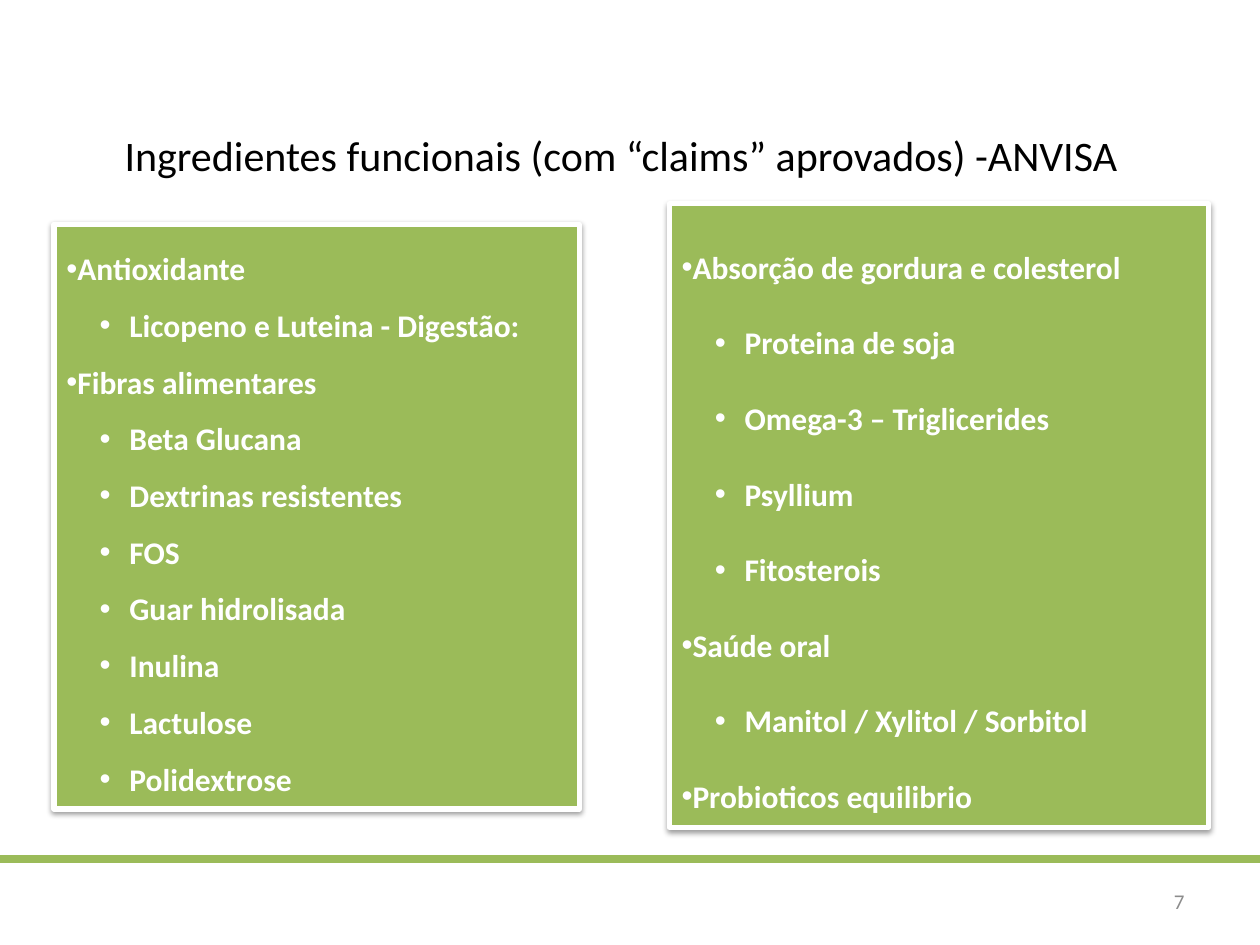
import dataclasses

import lxml.etree
import pptx
import pptx.dml.color
import pptx.enum.shapes
import pptx.enum.text
import pptx.oxml
import pptx.oxml.ns
import pptx.util

Cm, Pt = pptx.util.Cm, pptx.util.Pt
ALIGN = pptx.enum.text.PP_ALIGN
ANCHOR = pptx.enum.text.MSO_ANCHOR
GREEN, WHITE, BLACK, GREY = "9BBB59", "FFFFFF", "000000", "8C8C8C"
SHADOW = (
    '<a:effectLst xmlns:a="http://schemas.openxmlformats.org/drawingml/2006/main">'
    '<a:outerShdw blurRad="40000" dist="20000" dir="5400000" rotWithShape="0">'
    '<a:srgbClr val="000000"><a:alpha val="38000"/></a:srgbClr>'
    "</a:outerShdw></a:effectLst>"
)


@dataclasses.dataclass
class Group:
    head: str
    items: tuple[str, ...] = ()


@dataclasses.dataclass
class Panel:
    left: float
    top: float
    width: float
    height: float
    gap: float
    groups: tuple[Group, ...]


PANELS = (
    Panel(1.09, 4.52, 10.59, 11.79, 1.5, (
        Group("Antioxidante", ("Licopeno e Luteina - Digestão:",)),
        Group("Fibras alimentares", (
            "Beta Glucana", "Dextrinas resistentes", "FOS", "Guar hidrolisada",
            "Inulina", "Lactulose", "Polidextrose")),
    )),
    Panel(13.49, 4.11, 10.87, 12.57, 2.0, (
        Group("Absorção de gordura e colesterol", (
            "Proteina de soja", "Omega-3 – Triglicerides", "Psyllium", "Fitosterois")),
        Group("Saúde oral", ("Manitol / Xylitol / Sorbitol",)),
        Group("Probioticos equilibrio"),
    )),
)


def rgb(code: str) -> pptx.dml.color.RGBColor:
    return pptx.dml.color.RGBColor.from_string(code)


def add_bullet(para, left: float, hang: float) -> None:
    props = para._p.get_or_add_pPr()
    props.set("marL", str(Cm(left)))
    props.set("indent", str(-Cm(hang)))
    font = lxml.etree.SubElement(props, pptx.oxml.ns.qn("a:buFont"))
    font.set("typeface", "Arial")
    mark = lxml.etree.SubElement(props, pptx.oxml.ns.qn("a:buChar"))
    mark.set("char", "•")


def write(para, text: str, *, size: float, color: str, bold: bool = False,
          align=ALIGN.LEFT, gap: float = 1.0) -> None:
    para.alignment = align
    para.line_spacing = gap
    run = para.add_run()
    run.text = text
    run.font.name = "Calibri"
    run.font.size = Pt(size)
    run.font.bold = bold
    run.font.color.rgb = rgb(color)


def add_label(slide, box: tuple[float, ...], text: str, **style) -> None:
    frame = slide.shapes.add_textbox(*map(Cm, box)).text_frame
    frame.word_wrap = True
    frame.vertical_anchor = ANCHOR.MIDDLE
    write(frame.paragraphs[0], text, **style)


def add_rule(slide, top: float, width: float) -> None:
    rule = slide.shapes.add_connector(
        pptx.enum.shapes.MSO_CONNECTOR.STRAIGHT, Cm(0), Cm(top), Cm(width), Cm(top))
    rule.line.color.rgb = rgb(GREEN)
    rule.line.width = Pt(4.5)
    lxml.etree.SubElement(rule._element.spPr, pptx.oxml.ns.qn("a:effectLst"))


def add_panel(slide, panel: Panel) -> None:
    box = slide.shapes.add_shape(
        pptx.enum.shapes.MSO_SHAPE.RECTANGLE,
        Cm(panel.left), Cm(panel.top), Cm(panel.width), Cm(panel.height))
    box.fill.solid()
    box.fill.fore_color.rgb = rgb(GREEN)
    box.line.color.rgb = rgb(WHITE)
    box.line.width = Pt(3)
    box._element.spPr.append(pptx.oxml.parse_xml(SHADOW))

    frame = box.text_frame
    frame.word_wrap = True
    frame.auto_size = pptx.enum.text.MSO_AUTO_SIZE.SHAPE_TO_FIT_TEXT
    frame.vertical_anchor = ANCHOR.TOP
    rows = [(text, level) for group in panel.groups
            for text, level in [(group.head, 0), *((item, 1) for item in group.items)]]
    for i, (text, level) in enumerate(rows):
        para = frame.add_paragraph() if i else frame.paragraphs[0]
        para.level = level
        add_bullet(para, 1.27 * level, 0.6 * level)
        write(para, text, size=18, color=WHITE, bold=True, gap=panel.gap)


def main() -> None:
    deck = pptx.Presentation()
    deck.slide_width, deck.slide_height = Cm(25.4), Cm(19.05)
    slide = deck.slides.add_slide(deck.slide_layouts[6])
    add_rule(slide, 17.32, 25.4)
    add_label(slide, (1.09, 1.52, 22.86, 3.18),
              "Ingredientes funcionais (com “claims” aprovados) -ANVISA",
              size=24, color=BLACK, align=ALIGN.CENTER)
    add_label(slide, (18.2, 17.65, 5.93, 1.02), "7",
              size=12, color=GREY, align=ALIGN.RIGHT)
    for panel in PANELS:
        add_panel(slide, panel)
    deck.save("out.pptx")


if __name__ == "__main__":
    main()
